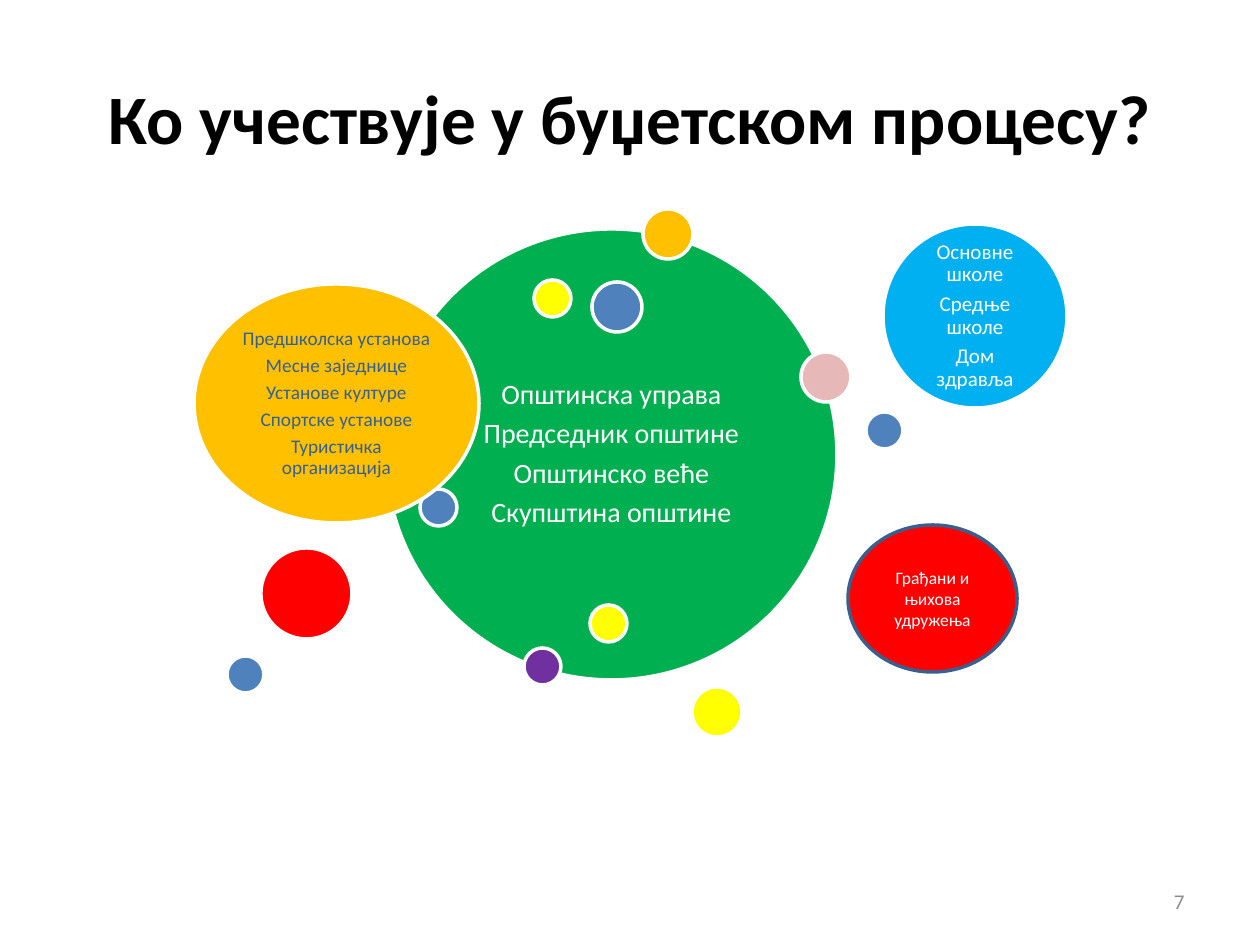
from dataclasses import dataclass

from pptx import Presentation
from pptx.dml.color import RGBColor
from pptx.enum.shapes import MSO_SHAPE
from pptx.enum.text import MSO_ANCHOR, PP_ALIGN
from pptx.util import Emu, Pt

SCALE = 914400 / 126


@dataclass(frozen=True)
class Theme:
    font: str = "Calibri"
    black: str = "000000"
    white: str = "FFFFFF"
    gray: str = "8C8C8C"
    green: str = "00B050"
    gold: str = "FFC000"
    purple: str = "7030A0"
    blue: str = "4F81BD"
    navy: str = "376092"
    edge: str = "3A5F8C"
    yellow: str = "FFFF00"
    red: str = "FF0000"
    sky: str = "00B0F0"
    pink: str = "E6B9B8"
    title: float = 39.6
    core: int = 16
    school: int = 12
    local: int = 11
    public: int = 10
    number: int = 12
    line: int = 2


T = Theme()
SMALL, MEDIUM, LARGE = 37, 50, 91


def px(n):
    return Emu(round(n * SCALE))


def rgb(color):
    return RGBColor.from_string(color)


def write(shape, lines, size, color, align=PP_ALIGN.CENTER, bold=False):
    frame = shape.text_frame
    frame.word_wrap = True
    frame.vertical_anchor = MSO_ANCHOR.MIDDLE
    frame.text = "\n".join(lines)
    for para in frame.paragraphs:
        para.alignment = align
        para.font.name = T.font
        para.font.size = Pt(size)
        para.font.bold = bold
        para.font.color.rgb = rgb(color)


def add_label(slide, box, text, size, color, align=PP_ALIGN.CENTER, bold=False):
    label = slide.shapes.add_textbox(*map(px, box))
    write(label, [text], size, color, align, bold)


def add_oval(slide, box, fill, edge=T.white):
    oval = slide.shapes.add_shape(MSO_SHAPE.OVAL, *map(px, box))
    oval.shadow.inherit = False
    oval.fill.solid()
    oval.fill.fore_color.rgb = rgb(fill)
    oval.line.color.rgb = rgb(edge)
    oval.line.width = Pt(T.line)
    return oval


def add_group(slide, box, fill, lines, size, color, inset):
    """Draw an oval that lists the members of one group."""
    oval = add_oval(slide, box, fill)
    write(oval, lines, size, color)
    frame = oval.text_frame
    frame.margin_left = frame.margin_right = px(inset)
    frame.margin_top = frame.margin_bottom = px(inset)
    for para in frame.paragraphs:
        para.line_spacing = 0.9
        para.space_after = Pt(round(size * 0.33, 1))


def add_dots(slide, dots):
    for left, top, size, fill in dots:
        add_oval(slide, (left, top, size, size), fill)


def main():
    deck = Presentation()
    deck.slide_width, deck.slide_height = px(1260), px(945)
    slide = deck.slides.add_slide(deck.slide_layouts[6])

    add_label(slide, (63, 38, 1134, 158), "Ко учествује у буџетском процесу?",
              T.title, T.black, bold=True)
    add_label(slide, (903, 876, 294, 50), "7", T.number, T.gray, PP_ALIGN.RIGHT)

    add_group(slide, (386, 229, 451, 451), T.green,
              ["Општинска управа", "Председник општине",
               "Општинско веће", "Скупштина општине"],
              T.core, T.white, 9)
    add_dots(slide, [
        (643, 209, MEDIUM, T.gold),
        (524, 648, SMALL, T.purple),
        (866, 412, SMALL, T.blue),
        (692, 687, MEDIUM, T.yellow),
        (534, 280, SMALL, T.yellow),
        (420, 489, SMALL, T.blue),
    ])
    add_group(slide, (194, 284, 285, 239), T.gold,
              ["Предшколска установа", "Месне заједнице", "Установе културе",
               "Спортске установе", "Туристичка организација"],
              T.local, T.navy, 6)
    add_group(slide, (883, 224, 184, 184), T.sky,
              ["Основне школе", "Средње школе", "Дом здравља"],
              T.school, T.white, 6)
    add_dots(slide, [
        (592, 282, MEDIUM, T.blue),
        (261, 548, LARGE, T.red),
        (801, 352, MEDIUM, T.pink),
        (227, 656, SMALL, T.blue),
        (590, 605, SMALL, T.yellow),
    ])
    public = add_oval(slide, (848, 525, 169, 147), T.red, T.edge)
    write(public, ["Грађани и њихова удружења"], T.public, T.white)

    deck.save("out.pptx")


if __name__ == "__main__":
    main()
